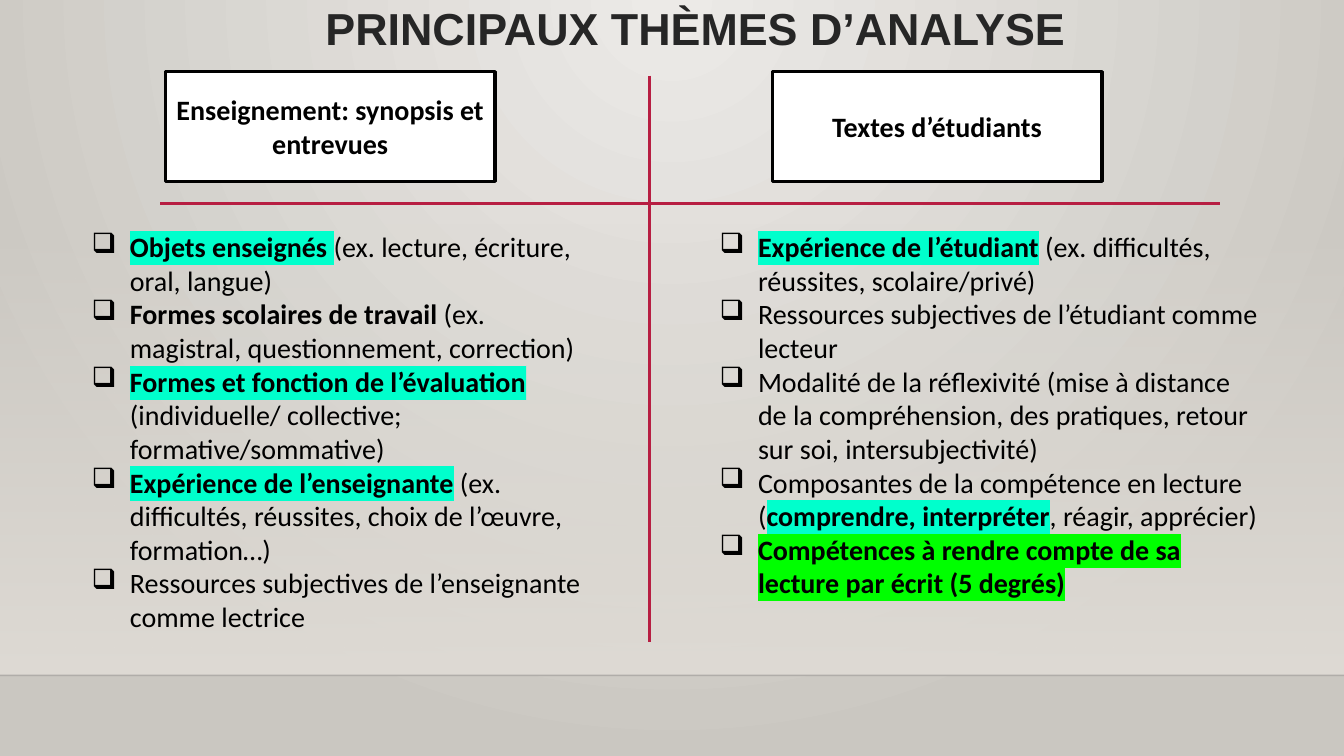
from pptx import Presentation
from pptx import util as u
from pptx.dml.color import RGBColor
from pptx.enum import shapes, text
from pptx.oxml import parse_xml
from pptx.oxml.ns import nsdecls, qn

BLACK = RGBColor(0x00, 0x00, 0x00)
WHITE = RGBColor(0xFF, 0xFF, 0xFF)
DARK = RGBColor(0x26, 0x26, 0x26)
RED = RGBColor(0xB7, 0x1E, 0x42)
INK = RGBColor(0x00, 0x00, 0x01)
SAND = RGBColor(0xDF, 0xDB, 0xD5)
PALE = RGBColor(0xEC, 0xEA, 0xE7)
GREY = RGBColor(0xCA, 0xC7, 0xC1)
AQUA = RGBColor(0x00, 0xFF, 0xCC)
GREEN = RGBColor(0x00, 0xFF, 0x00)

CENTER = text.PP_ALIGN.CENTER
RADIAL = '<a:path path="circle"><a:fillToRect l="43000" r="43000" b="100000"/></a:path>'
DOWN = '<a:lin ang="5400000" scaled="0"/>'

TEACH = [
    [("Objets enseignés ", True, AQUA), ("(ex. lecture, écriture, oral, langue)",)],
    [("Formes scolaires de travail", True),
     (" (ex. magistral, questionnement, correction)",)],
    [("Formes et fonction de l’évaluation", True, AQUA), (" ", False, AQUA),
     ("(individuelle/ collective; formative/sommative)",)],
    [("Expérience de l’enseignante", True, AQUA),
     (" (ex. difficultés, réussites, choix de l’œuvre, formation…)",)],
    [("Ressources subjectives de l’enseignante comme lectrice",)],
]
STUDY = [
    [("Expérience de l’étudiant", True, AQUA),
     (" (ex. difficultés, réussites, scolaire/privé)",)],
    [("Ressources subjectives de l’étudiant comme lecteur",)],
    [("Modalité de la réflexivité (mise à distance de la compréhension, "
      "des pratiques, retour sur soi, intersubjectivité)",)],
    [("Composantes de la compétence en lecture (",),
     ("comprendre, interpréter", True, AQUA), (", réagir, apprécier)",)],
    [("Compétences à rendre compte de sa lecture par écrit (5 degrés)", True, GREEN)],
]


def put(obj, form):
    for key, val in form.items():
        setattr(obj, key, val)


class Board:
    """Draws styled elements on one slide."""

    body = {"size": u.Pt(20), "name": "Calibri"}
    head = {"size": u.Pt(32), "name": "Arial"}

    def __init__(self, slide):
        self.slide = slide

    def blend(self, root, stops, path):
        marks = "".join(
            f'<a:gs pos="{pos}"><a:srgbClr val="{hue}"><a:alpha val="{alpha}"/></a:srgbClr></a:gs>'
            for pos, hue, alpha in stops)
        fill = parse_xml(f'<a:gradFill {nsdecls("a")} rotWithShape="1">'
                         f'<a:gsLst>{marks}</a:gsLst>{path}</a:gradFill>')
        old = next(root.iter(qn("a:solidFill")))
        old.getparent().replace(old, fill)

    def back(self):
        self.slide.background.fill.solid()
        self.slide.background.fill.fore_color.rgb = PALE
        self.blend(self.slide.element, [(0, PALE, 100000), (100000, GREY, 100000)], RADIAL)

    def rect(self, *place):
        box = self.slide.shapes.add_shape(shapes.MSO_SHAPE.RECTANGLE, *map(u.Inches, place))
        box.shadow.inherit = False
        box.fill.solid()
        box.fill.fore_color.rgb = WHITE
        return box

    def veil(self, *place):
        box = self.rect(*place)
        box.line.fill.background()
        self.blend(box.element, [(0, SAND, 0), (100000, SAND, 100000)], DOWN)

    def line(self, ends, hue, width, alpha=100):
        rule = self.slide.shapes.add_connector(
            shapes.MSO_CONNECTOR.STRAIGHT, *map(u.Inches, ends))
        rule.line.color.rgb = hue
        rule.line.width = u.Pt(width)
        if alpha < 100:
            tint = next(rule.element.iter(qn("a:srgbClr")))
            tint.append(parse_xml(f'<a:alpha {nsdecls("a")} val="{alpha * 1000}"/>'))
        rule.element.spPr.append(parse_xml(f'<a:effectLst {nsdecls("a")}/>'))

    def run(self, para, words, bold=False, mark=None, style=body, hue=BLACK):
        run = para.add_run()
        run.text = words
        run.font.color.rgb = hue
        if mark:
            run.font.bold = bold
            run._r.get_or_add_rPr().append(parse_xml(
                f'<a:highlight {nsdecls("a")}><a:srgbClr val="{mark}"/></a:highlight>'))
        put(run.font, {**style, "bold": bold})

    def label(self, words, left):
        box = self.rect(left, 0.71, 3.27, 1.09)
        put(box.line, {"width": u.Pt(2.25)})
        box.line.color.rgb = BLACK
        put(box.text_frame, {"word_wrap": True, "vertical_anchor": text.MSO_ANCHOR.MIDDLE})
        para = box.text_frame.paragraphs[0]
        para.alignment = CENTER
        self.run(para, words, True)

    def frame(self, *place):
        box = self.slide.shapes.add_textbox(*map(u.Inches, place))
        box.text_frame.word_wrap = True
        return box.text_frame

    def points(self, items, left, width):
        frame = self.frame(left, 2.23, width, 4.14)
        frame.auto_size = text.MSO_AUTO_SIZE.SHAPE_TO_FIT_TEXT
        for num, item in enumerate(items):
            para = frame.add_paragraph() if num else frame.paragraphs[0]
            props = para._p.get_or_add_pPr()
            dent = u.Inches(0.38)
            props.set("marL", str(dent))
            props.set("indent", str(-dent))
            props.append(parse_xml(f'<a:buChar {nsdecls("a")} char="❑"/>'))
            for part in item:
                self.run(para, *part)

    def title(self, words):
        para = self.frame(1.65, 0.02, 10.5, 1.15).paragraphs[0]
        put(para, {"alignment": CENTER, "line_spacing": 0.9})
        self.run(para, words, True, style=self.head, hue=DARK)


def main():
    deck = Presentation()
    put(deck, {"slide_width": u.Inches(13.33), "slide_height": u.Inches(7.5)})
    board = Board(deck.slides.add_slide(deck.slide_layouts[6]))
    board.back()
    board.veil(0, 2.21, 13.33, 4.49)
    board.line((0, 6.7, 13.33, 6.7), INK, 1, 20)
    board.line((1.59, 2.02, 12.1, 2.02), RED, 2.5)
    board.label("Enseignement: synopsis et entrevues", 1.64)
    board.label("Textes d’étudiants", 7.66)
    board.points(TEACH, 0.81, 5.08)
    board.points(STUDY, 7.04, 5.54)
    board.line((6.44, 0.75, 6.44, 6.37), RED, 2.25)
    board.title("PRINCIPAUX THÈMES D’ANALYSE")
    deck.save("out.pptx")


if __name__ == "__main__":
    main()
